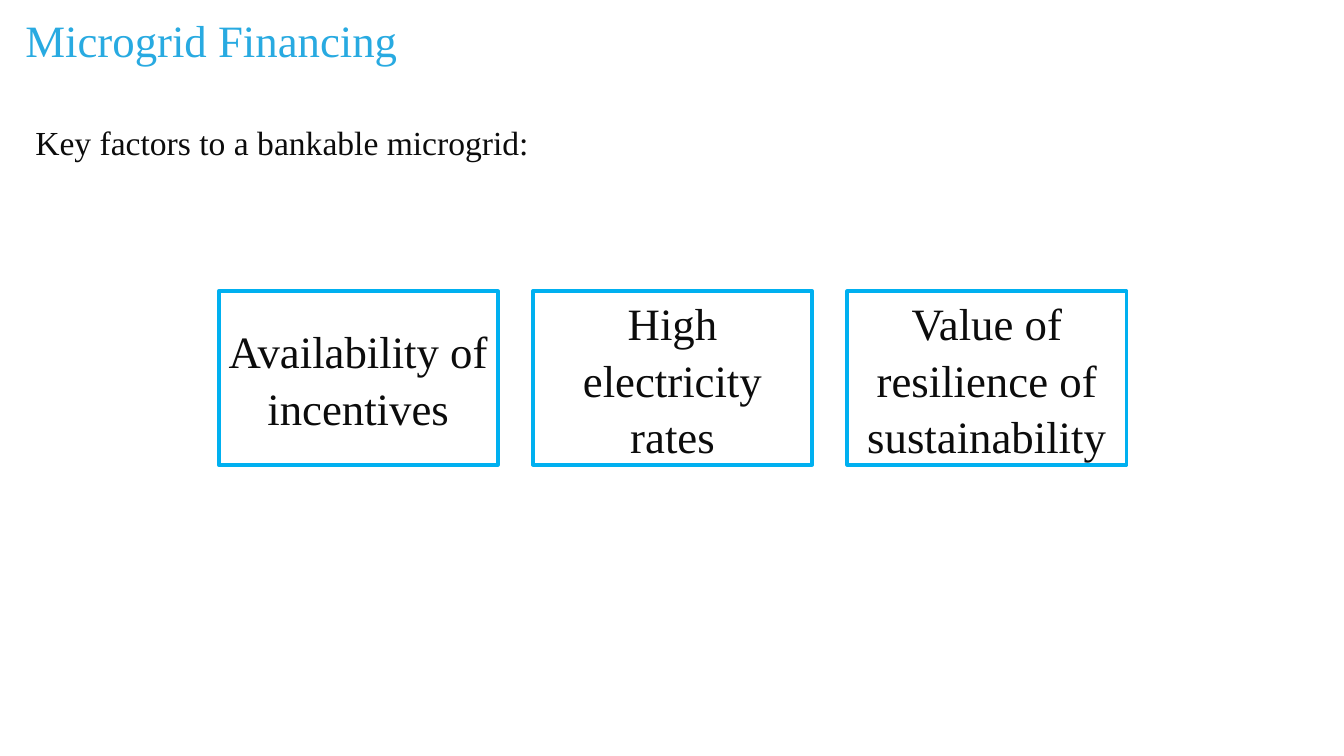
from dataclasses import dataclass

from pptx import Presentation
from pptx.dml.color import RGBColor
from pptx.enum.shapes import MSO_SHAPE
from pptx.enum.text import MSO_ANCHOR, PP_ALIGN
from pptx.shapes.autoshape import Shape
from pptx.slide import Slide
from pptx.util import Cm, Pt

TITLE_BLUE = RGBColor(0x28, 0xAA, 0xE1)
BORDER_BLUE = RGBColor(0x00, 0xB0, 0xF0)
INK = RGBColor(0x0C, 0x0C, 0x0C)
FONT = "Times New Roman"

FACTORS = ["Availability of incentives", "High electricity rates",
           "Value of resilience of sustainability"]
FACTOR_LEFT, FACTOR_TOP = 5.51, 7.34
FACTOR_WIDTH, FACTOR_HEIGHT = 7.04, 4.37
FACTOR_PITCH = 7.92


@dataclass
class Frame:
    left: float
    top: float
    width: float
    height: float

    def lengths(self) -> tuple[Cm, Cm, Cm, Cm]:
        return Cm(self.left), Cm(self.top), Cm(self.width), Cm(self.height)


def write_text(box: Shape, text: str, size: int, color: RGBColor,
               line_spacing: float) -> None:
    box.text_frame.word_wrap = True
    box.text_frame.text = text
    para = box.text_frame.paragraphs[0]
    para.line_spacing = line_spacing
    span = para.runs[0]
    span.font.name = FONT
    span.font.size = Pt(size)
    span.font.color.rgb = color


def add_title(page: Slide, text: str) -> None:
    box = page.shapes.add_textbox(*Frame(0.64, 0.53, 24.38, 2.44).lengths())
    frame = box.text_frame
    frame.margin_left = frame.margin_right = Cm(0)
    frame.margin_top = frame.margin_bottom = Cm(0)
    write_text(box, text, 32, TITLE_BLUE, 0.85)


def add_lead(page: Slide, text: str) -> None:
    box = page.shapes.add_textbox(*Frame(0.64, 3.07, 13.41, 15.44).lengths())
    write_text(box, text, 24, INK, 0.9)


def add_factor(page: Slide, frame: Frame, text: str) -> None:
    box = page.shapes.add_shape(MSO_SHAPE.RECTANGLE, *frame.lengths())
    box.shadow.inherit = False
    box.fill.background()
    box.line.color.rgb = BORDER_BLUE
    box.line.width = Pt(2.75)
    write_text(box, text, 32, INK, 1.05)
    box.text_frame.vertical_anchor = MSO_ANCHOR.MIDDLE
    box.text_frame.paragraphs[0].alignment = PP_ALIGN.CENTER


def main() -> None:
    deck = Presentation()
    deck.slide_width = Cm(33.87)
    deck.slide_height = Cm(19.05)
    page = deck.slides.add_slide(deck.slide_layouts[6])
    add_title(page, "Microgrid Financing")
    for index, text in enumerate(FACTORS):
        left = FACTOR_LEFT + index * FACTOR_PITCH
        add_factor(page, Frame(left, FACTOR_TOP, FACTOR_WIDTH, FACTOR_HEIGHT), text)
    add_lead(page, "Key factors to a bankable microgrid:")
    deck.save("out.pptx")


if __name__ == "__main__":
    main()
